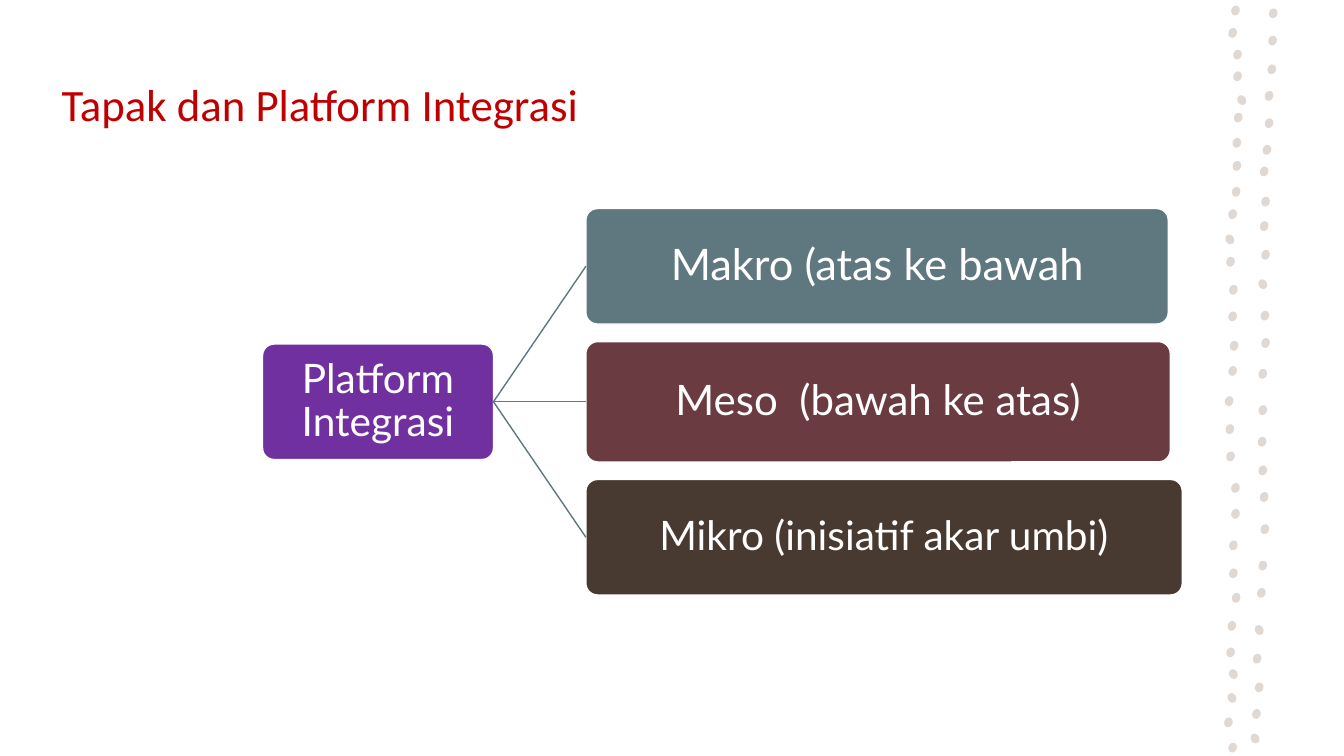
import pptx
import pptx.dml.color
import pptx.enum.shapes
import pptx.enum.text
import pptx.oxml
import pptx.oxml.ns
import pptx.util

Pt = pptx.util.Pt
RGBColor = pptx.dml.color.RGBColor
SHAPES = pptx.enum.shapes.MSO_SHAPE
MIDDLE = pptx.enum.text.MSO_ANCHOR.MIDDLE
CENTER = pptx.enum.text.PP_ALIGN.CENTER

WHITE = RGBColor(0xFF, 0xFF, 0xFF)
RED = RGBColor(0xC0, 0x00, 0x00)
PURPLE = RGBColor(0x70, 0x30, 0xA0)
SLATE = RGBColor(0x5F, 0x78, 0x7F)
WINE = RGBColor(0x6B, 0x3B, 0x42)
BROWN = RGBColor(0x48, 0x3A, 0x31)
SAND = RGBColor(0xE0, 0xD8, 0xD2)

# Dot centres, relative to the border strip
LEFT_DOTS = [
    (12.5, 7.5), (10.5, 23.5), (14, 39), (14, 54.5), (17, 71.5), (14.5, 84),
    (13.5, 102), (13.5, 118.5), (13, 137), (10.5, 153), (8.5, 171), (9, 187),
    (11, 207), (10.5, 226), (11.5, 247), (10.5, 265), (8, 286.5), (8.5, 306.5),
    (9, 326), (12.5, 348.5), (12.5, 367), (11, 389.5), (11, 409.5), (13, 427),
    (10, 447), (9, 466), (11, 481.5), (10, 498.5), (7.5, 516), (10.5, 534)]
RIGHT_DOTS = [
    (39.5, 9.5), (39, 29), (38.5, 49.5), (36.5, 68.5), (36.5, 88), (35, 107),
    (33, 122.5), (34, 144), (33, 161.5), (34, 182), (32, 203), (33.5, 225.5),
    (34, 245), (32, 267), (32, 293), (31.5, 315.5), (32, 336), (33, 355),
    (33.5, 378), (32, 404), (31, 423.5), (29.5, 450), (28, 470.5),
    (29.5, 491), (27.5, 510), (26.5, 527.5)]
# Heights at which a dot leans to the left
LEANING = {71.5, 171, 203, 450, 481.5, 498.5, 527.5}

BRANCHES = [  # wording, size, fill, width, height
    ("Makro (atas ke bawah", 31, SLATE, 416, 82.5),
    ("Meso  (bawah ke atas)", 30, WINE, 417.5, 86),
    ("Mikro (inisiatif akar umbi)", 29, BROWN, 426, 82.5)]


def add_dotted_border(page, left, top):
    width, height = 6, 7.2
    for x, y in LEFT_DOTS + RIGHT_DOTS:
        dot = page.shapes.add_shape(
            SHAPES.OVAL, Pt(left + x - width / 2), Pt(top + y - height / 2),
            Pt(width), Pt(height))
        dot.rotation = -30 if y in LEANING else 20
        dot.shadow.inherit = False
        dot.fill.solid()
        dot.fill.fore_color.rgb = SAND
        dot.line.fill.background()


def add_title(page, left, top, width, height):
    box = page.shapes.add_textbox(Pt(left), Pt(top), Pt(width), Pt(height))
    frame = box.text_frame
    frame.word_wrap = True
    frame.vertical_anchor = MIDDLE
    para = frame.paragraphs[0]
    para.text = "Tapak dan Platform Integrasi"
    para.font.name = "Calibri"
    para.font.size = Pt(32)
    para.font.color.rgb = RED


def add_node(page, words, size, color, left, top, width, height):
    node = page.shapes.add_shape(SHAPES.ROUNDED_RECTANGLE, Pt(left), Pt(top),
                                 Pt(width), Pt(height))
    node.adjustments[0] = 0.1
    node.shadow.inherit = False
    node.fill.solid()
    node.fill.fore_color.rgb = color
    node.line.color.rgb = WHITE
    node.line.width = Pt(1)
    frame = node.text_frame
    frame.word_wrap = True
    frame.vertical_anchor = MIDDLE
    frame.margin_left = frame.margin_right = Pt(1.5)
    frame.margin_top = frame.margin_bottom = Pt(1.5)
    para = frame.paragraphs[0]
    para.text = words
    para.alignment = CENTER
    para.line_spacing = 0.9
    para.font.name = "Lato"
    para.font.size = Pt(size)
    para.font.color.rgb = WHITE
    return node


def add_link(page, root, branch):
    link = page.shapes.add_connector(
        pptx.enum.shapes.MSO_CONNECTOR.STRAIGHT, 0, 0, 0, 0)
    link.begin_connect(root, 3)
    link.end_connect(branch, 1)
    link.line.color.rgb = SLATE
    link.line.width = Pt(1)
    properties = link._element.spPr
    properties.append(pptx.oxml.parse_xml(
        "<a:effectLst %s/>" % pptx.oxml.ns.nsdecls("a")))


def add_hierarchy(page, left, top):
    # Root, level with the middle branch
    root = add_node(page, "Platform Integrasi", 29, PURPLE,
                    left, top + 96.75, 165, 82.5)
    # Branches, stacked with equal gaps
    gap = 12.5
    for words, size, color, width, height in BRANCHES:
        branch = add_node(page, words, size, color,
                          left + 231, top, width, height)
        add_link(page, root, branch)
        top += height + gap


def main():
    deck = pptx.Presentation()
    deck.slide_width = Pt(960)
    deck.slide_height = Pt(540)
    page = deck.slides.add_slide(deck.slide_layouts[6])
    add_dotted_border(page, 870, 0)
    add_title(page, 37, 49, 773, 49.5)
    add_hierarchy(page, 187.5, 149)
    deck.save("out.pptx")


if __name__ == "__main__":
    main()
